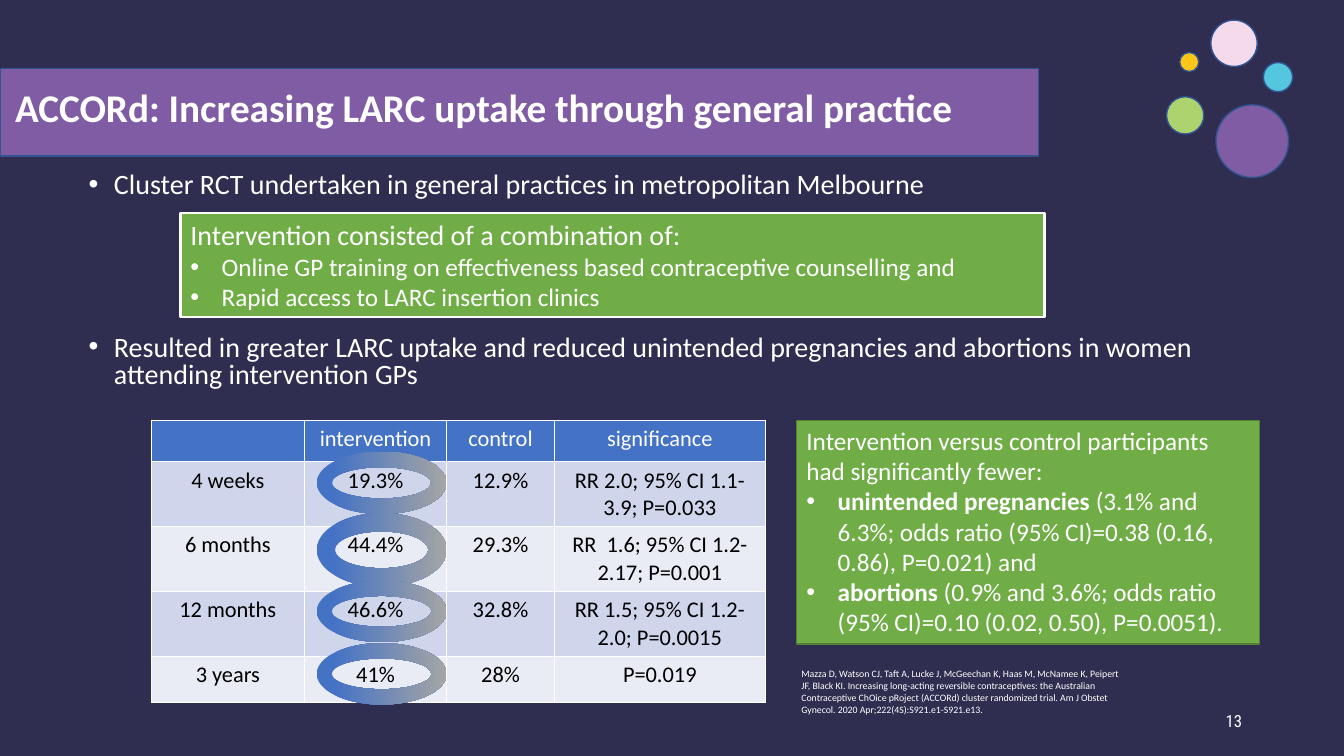
from dataclasses import dataclass

from lxml.etree import SubElement
from pptx import Presentation
from pptx.dml.color import RGBColor
from pptx.enum.shapes import MSO_SHAPE as Shape
from pptx.enum.text import MSO_ANCHOR as Anchor, MSO_AUTO_SIZE as AutoSize, PP_ALIGN as Align
from pptx.oxml.ns import qn
from pptx.util import Inches, Pt


@dataclass(frozen=True)
class Theme:
    font: str = "Calibri"
    number_font: str = "Roboto Condensed"
    night: str = "2F2E50"
    white: str = "FFFFFF"
    black: str = "000000"
    purple: str = "805CA4"
    outline: str = "325491"
    green: str = "70AD47"
    dark_green: str = "538035"
    blue: str = "4472C4"
    grey: str = "A5A5A5"
    bands: tuple = ("CFD5EA", "E9EBF5")
    title: int = 28
    lead: int = 20
    detail: int = 18
    cell: int = 16
    number: int = 12
    citation: int = 7


theme = Theme()
rgb = RGBColor.from_string

deck = Presentation()
deck.slide_width, deck.slide_height = Inches(13.33), Inches(7.5)
slide = deck.slides.add_slide(deck.slide_layouts[1])
slide.background.fill.solid()
slide.background.fill.fore_color.rgb = rgb(theme.night)


def add_filled(kind, left, top, width, height, fill, line, weight=1):
    shape = slide.shapes.add_shape(kind, Inches(left), Inches(top), Inches(width), Inches(height))
    shape.shadow.inherit = False
    shape.fill.solid()
    shape.fill.fore_color.rgb = rgb(fill)
    shape.line.color.rgb = rgb(line)
    shape.line.width = Pt(weight)
    return shape


def style(paragraph, size, color=theme.white, bold=False, align=Align.LEFT, bullet_indent=0):
    """Format a paragraph and its runs; a bullet indent above zero adds a bullet."""
    paragraph.alignment = align
    if bullet_indent:
        properties = paragraph._p.get_or_add_pPr()
        properties.set("marL", str(Inches(bullet_indent)))
        properties.set("indent", str(-Inches(bullet_indent)))
        SubElement(properties, qn("a:buFont"), typeface="Arial")
        SubElement(properties, qn("a:buChar"), char="•")
    for run in paragraph.runs:
        run.font.name = theme.font
        run.font.size = Pt(size)
        run.font.bold = bold
        run.font.color.rgb = rgb(color)


# Title band and corner dots
band = add_filled(Shape.RECTANGLE, 0, 0.68, 10.3, 0.87, theme.purple, theme.outline)
for left, top, diameter, color in [
    (12.01, 0.2, 0.46, "F5DAEB"),
    (11.7, 0.52, 0.19, "FCC719"),
    (12.06, 1.04, 0.72, theme.purple),
    (11.57, 0.96, 0.37, "ADD36E"),
    (12.53, 0.62, 0.29, "54C6DE"),
]:
    add_filled(Shape.OVAL, left, top, diameter, diameter, color, theme.outline)

title = slide.shapes.title
findings = slide.placeholders[1]
for placeholder, (left, top, width, height) in [
    (title, (0.05, 0.36, 10.3, 1.45)),
    (findings, (0.78, 1.67, 11.5, 2.35)),
]:
    placeholder.left, placeholder.top = Inches(left), Inches(top)
    placeholder.width, placeholder.height = Inches(width), Inches(height)
    placeholder.text_frame.auto_size = AutoSize.NONE
    # Bring the text in front of the band
    slide.shapes._spTree.append(placeholder._element)

title.text_frame.text = "ACCORd: Increasing LARC uptake through general practice"
title.text_frame.vertical_anchor = Anchor.MIDDLE
title.text_frame.paragraphs[0].line_spacing = 0.9
style(title.text_frame.paragraphs[0], theme.title, bold=True)

findings.text_frame.text = (
    "Cluster RCT undertaken in general practices in metropolitan Melbourne\n"
    "Resulted in greater LARC uptake and reduced unintended pregnancies and abortions"
    " in women attending intervention GPs"
)
findings.text_frame.vertical_anchor = Anchor.TOP
for paragraph, gap in zip(findings.text_frame.paragraphs, (0, 97)):
    paragraph.line_spacing = 0.8
    paragraph.space_before = Pt(gap)
    style(paragraph, theme.lead, bullet_indent=0.25)

# Uptake table
uptake = [
    ["", "intervention", "control", "significance"],
    ["4 weeks", "19.3%", "12.9%", "RR 2.0; 95% CI 1.1-3.9; P=0.033"],
    ["6 months", "44.4%", "29.3%", "RR  1.6; 95% CI 1.2-2.17; P=0.001"],
    ["12 months", "46.6%", "32.8%", "RR 1.5; 95% CI 1.2-2.0; P=0.0015"],
    ["3 years", "41%", "28%", "P=0.019"],
]
table = slide.shapes.add_table(
    5, 4, Inches(1.5), Inches(4.17), Inches(6.09), Inches(2.79)
).table
for column, width in zip(table.columns, (1.52, 1.41, 1.07, 2.09)):
    column.width = Inches(width)
for row, height in zip(table.rows, (0.41, 0.64, 0.64, 0.64, 0.46)):
    row.height = Inches(height)
for r, values in enumerate(uptake):
    for c, value in enumerate(values):
        cell = table.cell(r, c)
        cell.text = value
        cell.fill.solid()
        cell.fill.fore_color.rgb = rgb(theme.bands[(r - 1) % 2] if r else theme.blue)
        style(cell.text_frame.paragraphs[0], theme.cell,
              theme.black if r else theme.white, align=Align.CENTER)

# Rings round the intervention results
for top, height in [(4.48, 0.62), (5.09, 0.73), (5.76, 0.61), (6.38, 0.61)]:
    ring = add_filled(Shape.DONUT, 3.14, top, 1.29, height, theme.blue, theme.blue)
    ring.line.fill.background()
    ring.fill.gradient()
    ring.fill.gradient_angle = 0
    for stop, position, color in zip(ring.fill.gradient_stops, (0.12, 1), (theme.blue, theme.grey)):
        stop.position = position
        stop.color.rgb = rgb(color)

# Green boxes: a heading followed by bullets, each with an optional bold start
for area, line, weight, heading, heading_size, bullets in [
    ((7.9, 4.17, 4.59, 2.22), theme.dark_green, 1,
     "Intervention versus control participants had significantly fewer:", theme.detail,
     [("unintended pregnancies ",
       "(3.1% and 6.3%; odds ratio (95% CI)=0.38 (0.16, 0.86), P=0.021) and"),
      ("abortions", " (0.9% and 3.6%; odds ratio (95% CI)=0.10 (0.02, 0.50), P=0.0051).")]),
    ((1.79, 2.11, 8.57, 1.04), theme.white, 1.5,
     "Intervention consisted of a combination of:", theme.lead,
     [("", "Online GP training on effectiveness based contraceptive counselling and"),
      ("", "Rapid access to LARC insertion clinics")]),
]:
    frame = add_filled(Shape.RECTANGLE, *area, theme.green, line, weight).text_frame
    frame.word_wrap = True
    frame.vertical_anchor = Anchor.TOP
    frame.text = heading
    style(frame.paragraphs[0], heading_size)
    for strong, plain in bullets:
        paragraph = frame.add_paragraph()
        for part in filter(None, (strong, plain)):
            paragraph.add_run().text = part
        style(paragraph, theme.detail, bullet_indent=0.31)
        paragraph.runs[0].font.bold = bool(strong)

# Citation and slide number
citation = slide.shapes.add_textbox(Inches(7.85), Inches(6.58), Inches(3.41), Inches(0.57))
citation.text_frame.word_wrap = True
citation.text_frame.text = (
    "Mazza D, Watson CJ, Taft A, Lucke J, McGeechan K, Haas M, McNamee K, Peipert JF, Black KI. "
    "Increasing long-acting reversible contraceptives: the Australian Contraceptive ChOice pRoject "
    "(ACCORd) cluster randomized trial. Am J Obstet Gynecol. 2020 Apr;222(4S):S921.e1-S921.e13."
)
style(citation.text_frame.paragraphs[0], theme.citation)

number = slide.shapes.add_textbox(Inches(11.22), Inches(6.95), Inches(1.2), Inches(0.4))
number.text_frame.word_wrap = True
number.text_frame.vertical_anchor = Anchor.MIDDLE
number.text_frame.text = "13"
style(number.text_frame.paragraphs[0], theme.number, align=Align.RIGHT)
number.text_frame.paragraphs[0].runs[0].font.name = theme.number_font

deck.save("out.pptx")
